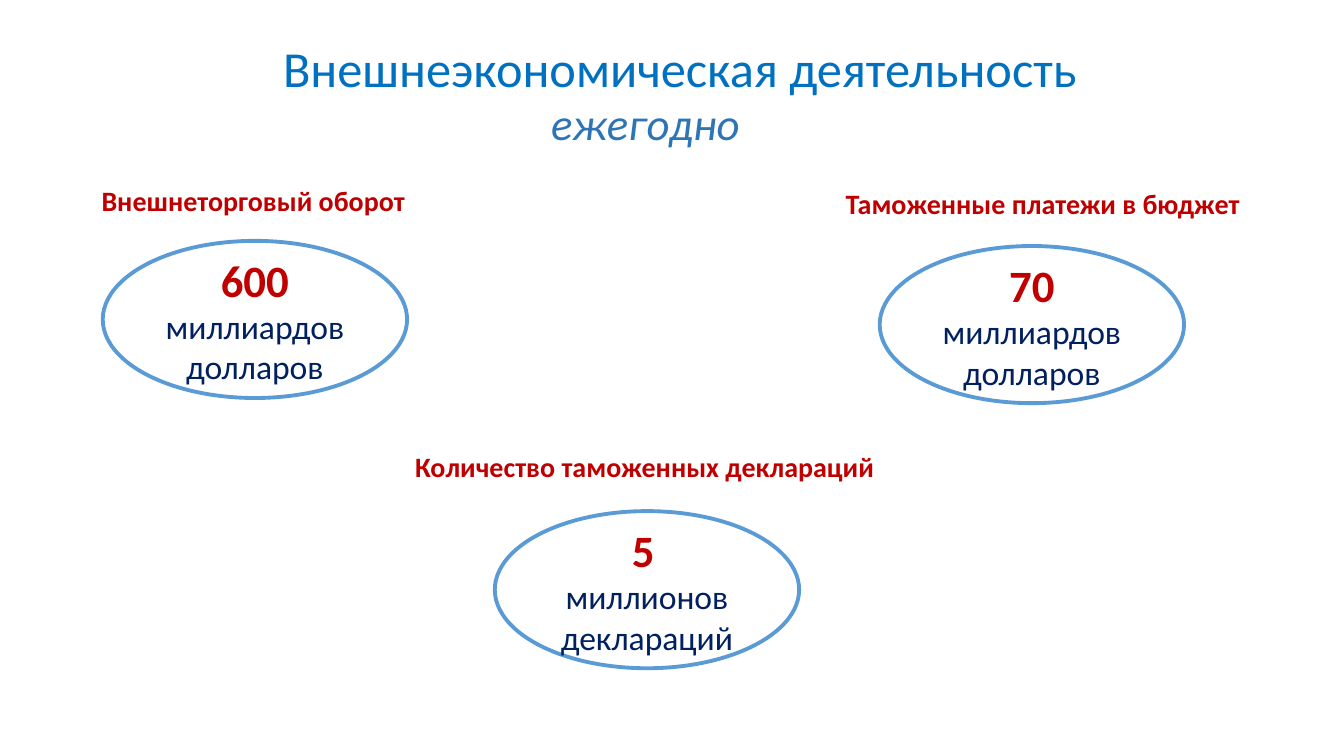
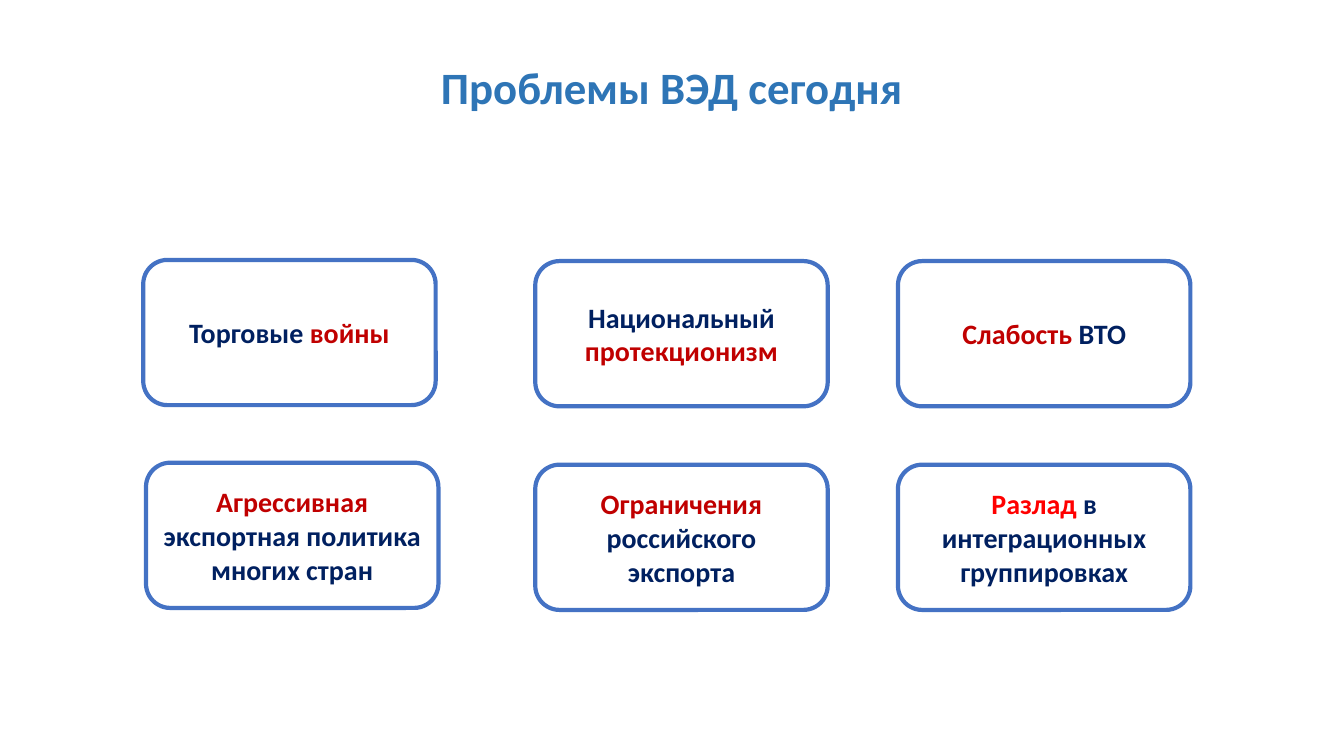
import pptx
import pptx.util
import pptx.dml.color
import pptx.enum.shapes
import pptx.enum.text

Cm = pptx.util.Cm
Pt = pptx.util.Pt
Shape = pptx.enum.shapes.MSO_SHAPE
Align = pptx.enum.text.PP_ALIGN
Anchor = pptx.enum.text.MSO_ANCHOR

FONT = "Calibri"
WHITE = "FFFFFF"
RED = "C00000"
BRIGHT_RED = "FF0000"
NAVY = "002060"
BLUE = "0070C0"
STEEL_BLUE = "2E75B6"
OVAL_LINE = "5B9BD5"
CARD_LINE = "4472C4"

OVAL_SIZE = (7.67, 3.96)
CARD_SIZE = (7.37, 3.66)


def color(value):
    return pptx.dml.color.RGBColor.from_string(value)


def add_span(para, text, size, shade, bold=False, italic=False):
    span = para.add_run()
    span.text = text
    span.font.name = FONT
    span.font.size = Pt(size)
    span.font.bold = bold
    span.font.italic = italic
    span.font.color.rgb = color(shade)


def place(box, left, top, width, height):
    box.left, box.top = Cm(left), Cm(top)
    box.width, box.height = Cm(width), Cm(height)


def add_title(page, position, text, size, shade, align, bold=False):
    title = page.shapes.title
    place(title, *position)
    frame = title.text_frame
    frame.word_wrap = False
    frame.auto_size = pptx.enum.text.MSO_AUTO_SIZE.NONE
    frame.vertical_anchor = Anchor.MIDDLE
    para = frame.paragraphs[0]
    para.alignment = align
    add_span(para, text, size, shade, bold)


def add_label(page, position, text, size=20, shade=RED, bold=True, italic=False):
    box = page.shapes.add_textbox(*map(Cm, position))
    box.text_frame.word_wrap = False
    add_span(box.text_frame.paragraphs[0], text, size, shade, bold, italic)


def add_outlined(page, kind, position, line_color, line_width, paragraphs):
    shape = page.shapes.add_shape(kind, *map(Cm, position))
    shape.shadow.inherit = False
    shape.fill.solid()
    shape.fill.fore_color.rgb = color(WHITE)
    shape.line.color.rgb = color(line_color)
    shape.line.width = Pt(line_width)
    frame = shape.text_frame
    frame.word_wrap = True
    frame.vertical_anchor = Anchor.MIDDLE
    for index, spans in enumerate(paragraphs):
        para = frame.add_paragraph() if index else frame.paragraphs[0]
        para.alignment = Align.CENTER
        for span in spans:
            add_span(para, *span)


def add_oval(page, left, top, paragraphs):
    add_outlined(page, Shape.OVAL, (left, top, *OVAL_SIZE), OVAL_LINE, 2.75, paragraphs)


def add_card(page, left, top, parts):
    spans = [(text, 20, shade, True) for text, shade in parts]
    add_outlined(page, Shape.ROUNDED_RECTANGLE, (left, top, *CARD_SIZE), CARD_LINE, 3, [spans])


def figure(text):
    return (text, 32, RED, True)


def unit(text):
    return (text, 24, NAVY)


def build_trade_page(page):
    add_title(page, (6.88, 0.79, 20.73, 1.8), "Внешнеэкономическая деятельность",
              36, BLUE, Align.LEFT)
    add_label(page, (13.64, 2.29, 5.31, 1.63), "ежегодно", 32, STEEL_BLUE, False, True)
    labels = [
        ((2.31, 4.5, 8.23, 1.12), "Внешнеторговый оборот"),
        ((21.06, 4.57, 10.52, 1.12), "Таможенные платежи в бюджет"),
        ((10.21, 11.2, 12.14, 1.12), "Количество таможенных деклараций"),
    ]
    for position, text in labels:
        add_label(page, position, text)
    billions = unit(" миллиардов долларов")
    ovals = [
        (2.59, 6.07, [[figure("600"), billions]]),
        (22.17, 6.2, [[figure("70"), billions]]),
        (12.47, 12.88, [[figure("5"), unit(" ")], [unit("миллионов деклараций")]]),
    ]
    for left, top, paragraphs in ovals:
        add_oval(page, left, top, paragraphs)


def build_problems_page(page):
    add_title(page, (10.82, 1.37, 12.22, 1.63), "Проблемы ВЭД сегодня",
              32, STEEL_BLUE, Align.CENTER, True)
    cards = [
        (3.61, 6.55, [("Торговые ", NAVY), ("войны", RED)]),
        (13.49, 6.58, [("Национальный", NAVY), (" протекционизм", RED)]),
        (22.63, 6.58, [("Слабость", RED), (" ВТО", NAVY)]),
        (3.68, 11.66, [("Агрессивная", RED), (" экспортная политика многих стран", NAVY)]),
        (13.49, 11.71, [("Ограничения", RED), (" российского экспорта", NAVY)]),
        (22.63, 11.71, [("Разлад", BRIGHT_RED), (" в интеграционных группировках", NAVY)]),
    ]
    for left, top, parts in cards:
        add_card(page, left, top, parts)


def main():
    deck = pptx.Presentation()
    deck.slide_width, deck.slide_height = Cm(33.87), Cm(19.05)
    title_only = deck.slide_layouts.get_by_name("Title Only")
    for build in (build_trade_page, build_problems_page):
        build(deck.slides.add_slide(title_only))
    deck.save("out.pptx")


if __name__ == "__main__":
    main()
